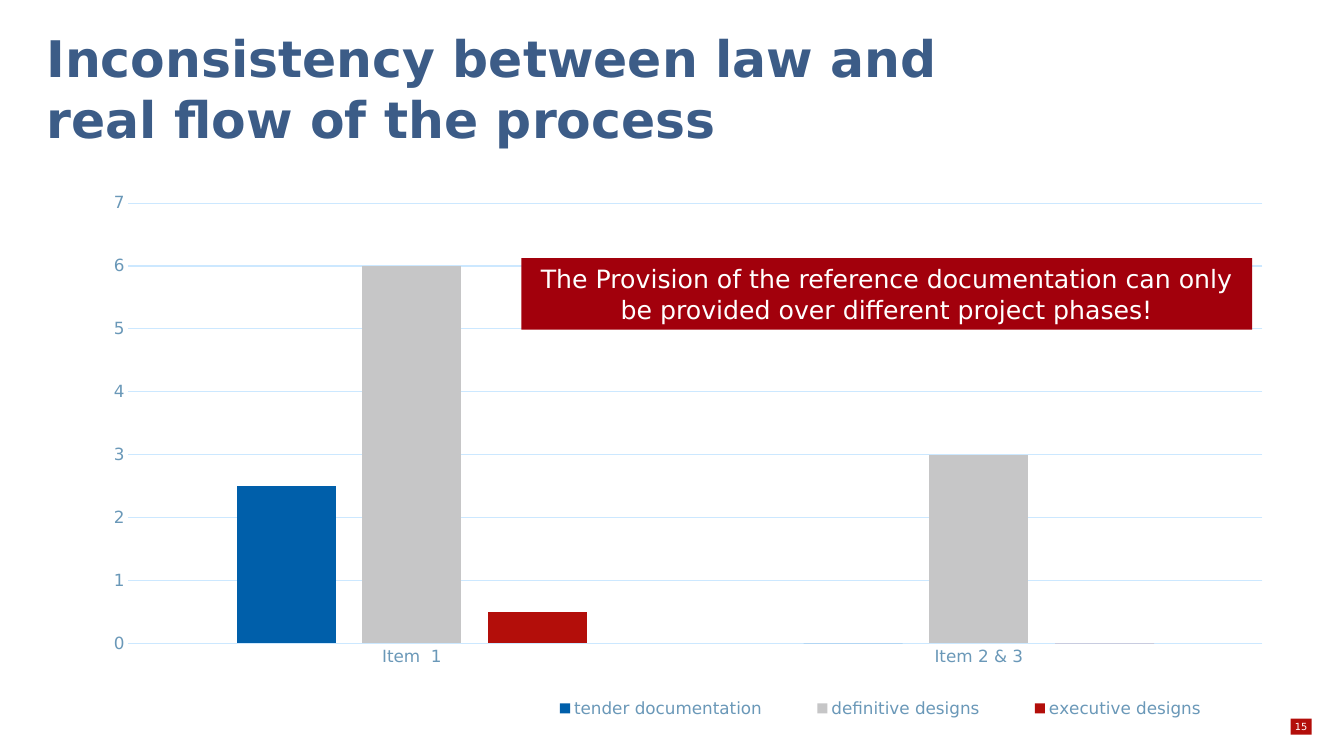
from pptx import Presentation
from pptx.chart.data import CategoryChartData
from pptx.dml.color import RGBColor
from pptx.enum.chart import XL_CHART_TYPE as ChartType, XL_LEGEND_POSITION as LegendPosition
from pptx.enum.chart import XL_TICK_MARK as TickMark
from pptx.enum.shapes import MSO_SHAPE as Preset
from pptx.enum.text import MSO_ANCHOR as Anchor, MSO_AUTO_SIZE as AutoSize, PP_ALIGN as Align
from pptx.oxml import parse_xml
from pptx.oxml.ns import nsdecls, qn
from pptx.util import Inches, Pt

FONT = "DejaVu Sans"
WHITE = RGBColor(0xFF, 0xFF, 0xFF)
TITLE_BLUE = RGBColor(0x3C, 0x5C, 0x87)
LABEL_BLUE = RGBColor(0x6A, 0x98, 0xB8)
GRID_BLUE = RGBColor(0xCC, 0xE8, 0xFF)
BLUE = RGBColor(0x00, 0x5F, 0xAA)
GRAY = RGBColor(0xC6, 0xC6, 0xC7)
RED = RGBColor(0xB3, 0x0E, 0x0A)
DARK_RED = RGBColor(0xA2, 0x00, 0x0C)

CATEGORIES = ["Item  1", "Item 2 & 3"]
SERIES = [
    ("tender documentation", (2.5, 0), BLUE),
    ("definitive designs", (6, 3), GRAY),
    ("executive designs", (0.5, 0), RED),
]


def style_font(font, size, color, bold=False):
    font.name = FONT
    font.size = Pt(size)
    font.bold = bold
    font.color.rgb = color


def style_line(line, color):
    line.color.rgb = color
    line.width = Pt(0.75)


def write_text(shape, text, size, color, align, bold=False):
    shape.text_frame.word_wrap = True
    shape.text_frame.text = text
    paragraph = shape.text_frame.paragraphs[0]
    paragraph.alignment = align
    style_font(paragraph.runs[0].font, size, color, bold)


def add_block(slide, left, top, width, height, color):
    block = slide.shapes.add_shape(
        Preset.RECTANGLE, Inches(left), Inches(top), Inches(width), Inches(height))
    block.shadow.inherit = False
    block.fill.solid()
    block.fill.fore_color.rgb = color
    block.line.fill.background()
    return block


def set_layout(parent, index, box, target=""):
    for old_layout in parent.findall(qn("c:layout")):
        parent.remove(old_layout)
    modes = '<c:xMode val="edge"/><c:yMode val="edge"/>'
    sizes = "".join(f'<c:{key} val="{value}"/>' for key, value in zip("xywh", box))
    parent.insert(index, parse_xml(
        f'<c:layout {nsdecls("c")}><c:manualLayout>{target}{modes}{sizes}'
        "</c:manualLayout></c:layout>"))


def add_title(slide, left, top, width, height):
    title = slide.shapes.title
    title.left, title.top = Inches(left), Inches(top)
    title.width, title.height = Inches(width), Inches(height)
    frame = title.text_frame
    frame.auto_size = AutoSize.NONE
    frame.vertical_anchor = Anchor.TOP
    frame.margin_top = Inches(0.05)
    write_text(title, "Inconsistency between law and real flow of the process",
               36, TITLE_BLUE, Align.LEFT, True)


def add_phase_chart(slide, left, top, width, height):
    data = CategoryChartData()
    data.categories = CATEGORIES
    for name, values, _ in SERIES:
        data.add_series(name, values)
    chart = slide.shapes.add_chart(
        ChartType.COLUMN_CLUSTERED, Inches(left), Inches(top),
        Inches(width), Inches(height), data).chart
    chart.has_title = False
    style_font(chart.font, 10, BLUE)

    plot = chart.plots[0]
    plot.vary_by_categories = False
    plot.gap_width = 219
    plot.overlap = -27
    for series, (_, _, color) in zip(plot.series, SERIES):
        series.format.fill.solid()
        series.format.fill.fore_color.rgb = color

    for axis in (chart.category_axis, chart.value_axis):
        axis.major_tick_mark = axis.minor_tick_mark = TickMark.NONE
        style_font(axis.tick_labels.font, 12, LABEL_BLUE)
    style_line(chart.category_axis.format.line, GRID_BLUE)
    value_axis = chart.value_axis
    value_axis.minimum_scale, value_axis.maximum_scale, value_axis.major_unit = 0, 7, 1
    value_axis.format.line.fill.background()
    style_line(value_axis.major_gridlines.format.line, GRID_BLUE)

    chart.has_legend = True
    legend = chart.legend
    legend.position = LegendPosition.BOTTOM
    legend.include_in_layout = False
    style_font(legend.font, 12, LABEL_BLUE)
    set_layout(legend._element, 1, (0.36, 0.94, 0.62, 0.06))
    set_layout(chart._chartSpace.chart.plotArea, 0, (0.04, 0.04, 0.95, 0.81),
               '<c:layoutTarget val="inner"/>')


def add_callout(slide, left, top, width, height):
    callout = add_block(slide, left, top, width, height, DARK_RED)
    callout.text_frame.vertical_anchor = Anchor.MIDDLE
    write_text(callout, "The Provision of the reference documentation can only "
               "be provided over different project phases!", 18, WHITE, Align.CENTER)


def add_page_number(slide, left, top, width, height):
    add_block(slide, left + 0.21, top + 0.03, 0.21, 0.16, RED)
    number = slide.shapes.add_textbox(
        Inches(left), Inches(top), Inches(width), Inches(height))
    write_text(number, "15", 7, WHITE, Align.CENTER)


def main():
    presentation = Presentation()
    presentation.slide_width, presentation.slide_height = Inches(13.33), Inches(7.5)
    slide = presentation.slides.add_slide(presentation.slide_layouts[5])
    add_page_number(slide, 12.59, 7.1, 0.63, 0.52)
    add_title(slide, 0.36, 0.22, 10.1, 1.64)
    add_phase_chart(slide, 0.8, 1.8, 11.84, 5.39)
    add_callout(slide, 5.17, 2.56, 7.25, 0.71)
    presentation.save("out.pptx")


if __name__ == "__main__":
    main()
